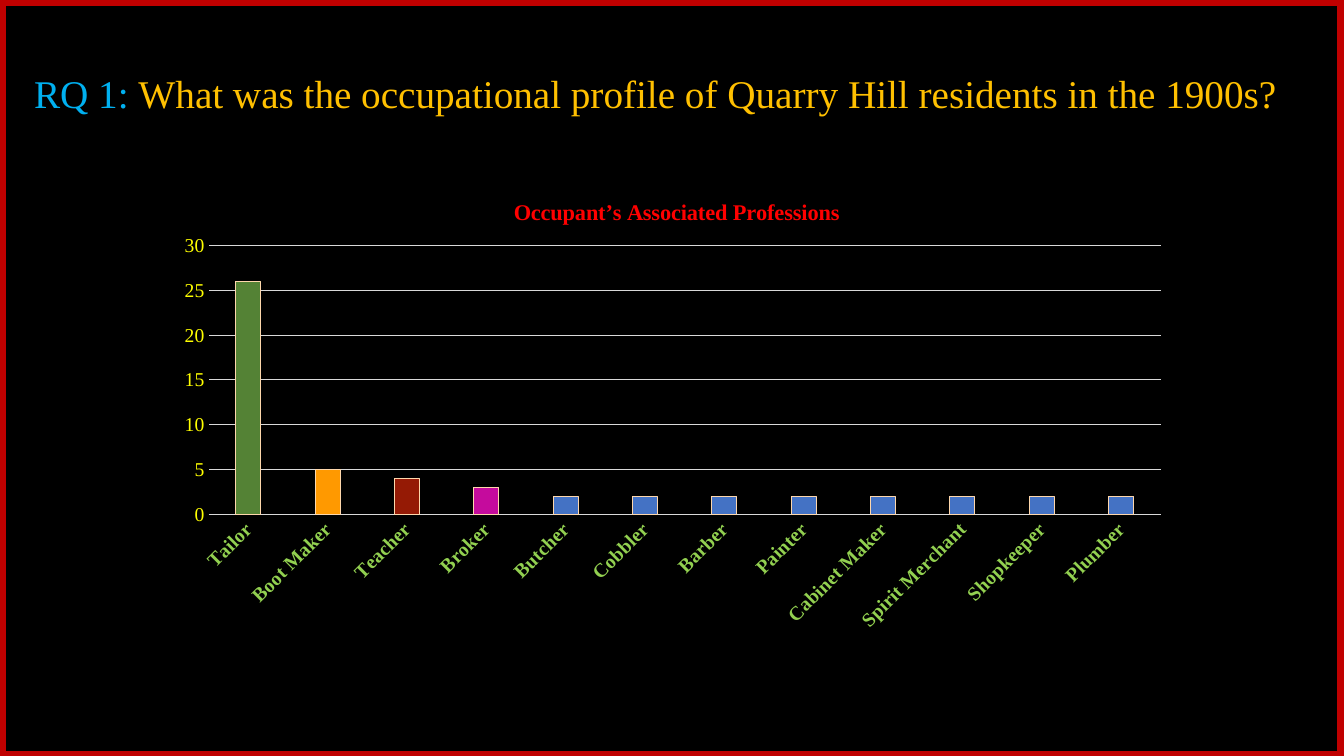
from dataclasses import dataclass

from lxml import etree
from pptx import Presentation
from pptx.chart.data import CategoryChartData
from pptx.dml.color import RGBColor
from pptx.enum.chart import XL_CHART_TYPE, XL_TICK_MARK
from pptx.enum.shapes import MSO_SHAPE
from pptx.enum.text import MSO_ANCHOR, PP_ALIGN
from pptx.oxml.ns import qn
from pptx.util import Pt

COLUMNS = XL_CHART_TYPE.COLUMN_CLUSTERED
NO_TICK = XL_TICK_MARK.NONE
RECTANGLE = MSO_SHAPE.RECTANGLE
MIDDLE = MSO_ANCHOR.MIDDLE
JUSTIFY = PP_ALIGN.JUSTIFY
PX = 9525


@dataclass(frozen=True)
class Theme:
    background: str = "000000"
    border: str = "C00000"
    label: str = "00B0F0"
    question: str = "FFC000"
    chart_title: str = "FF0000"
    professions: str = "92D050"
    counts: str = "FFFF00"
    grid: str = "D9D9D9"
    bar: str = "4472C4"
    bar_edge: str = "FED7AC"
    leading_bars: tuple = ("548235", "FF9900", "951A05", "C50B9D")
    font: str = "Times New Roman"
    base_font: str = "Calibri"
    base_size: float = 10
    question_size: float = 28
    title_size: float = 16
    axis_size: float = 14
    hairline: float = 0.75
    border_width: float = 6


def write(paragraph, text, *, size, color, bold=False):
    run = paragraph.add_run()
    run.text = text
    run.font.name = theme.font
    run.font.size = Pt(size)
    run.font.bold = bold
    run.font.color.rgb = RGBColor.from_string(color)


def place(parent, index, **fractions):
    for old in parent.findall(qn("c:layout")):
        parent.remove(old)
    layout = etree.Element(qn("c:layout"))
    manual = etree.SubElement(layout, qn("c:manualLayout"))
    if "w" in fractions:
        etree.SubElement(manual, qn("c:layoutTarget"), val="inner")
    for mode in ("xMode", "yMode"):
        etree.SubElement(manual, qn(f"c:{mode}"), val="edge")
    for key, value in fractions.items():
        etree.SubElement(manual, qn(f"c:{key}"), val=str(value))
    parent.insert(index, layout)


theme = Theme()
profession_counts = {
    "Tailor": 26, "Boot Maker": 5, "Teacher": 4, "Broker": 3,
    "Butcher": 2, "Cobbler": 2, "Barber": 2, "Painter": 2,
    "Cabinet Maker": 2, "Spirit Merchant": 2, "Shopkeeper": 2, "Plumber": 2,
}

prs = Presentation()
prs.slide_width = 1280 * PX
prs.slide_height = 720 * PX
slide = prs.slides.add_slide(prs.slide_layouts[6])
slide.background.fill.solid()
slide.background.fill.fore_color.rgb = RGBColor.from_string(theme.background)

border = slide.shapes.add_shape(RECTANGLE, 2 * PX, 2 * PX, 1275 * PX, 717 * PX)
border.shadow.inherit = False
border.fill.background()
border.line.color.rgb = RGBColor.from_string(theme.border)
border.line.width = Pt(theme.border_width)

chart_data = CategoryChartData()
chart_data.categories = list(profession_counts)
chart_data.add_series("Series 1", list(profession_counts.values()))
chart = slide.shapes.add_chart(
    COLUMNS, 156 * PX, 167 * PX, 969 * PX, 443 * PX, chart_data
).chart
chart.has_legend = False
chart.font.name = theme.base_font
chart.font.size = Pt(theme.base_size)
chart.font.color.rgb = RGBColor.from_string(theme.background)

chart.has_title = True
write(chart.chart_title.text_frame.paragraphs[0], "Occupant’s Associated Professions",
      size=theme.title_size, color=theme.chart_title, bold=True)
chart_root = chart.element.find(qn("c:chart"))
place(chart_root.find(qn("c:title")), 1, x=0.34, y=0.04)
place(chart_root.find(qn("c:plotArea")), 0, x=0.044, y=0.151, w=0.936, h=0.578)

professions, counts = chart.category_axis, chart.value_axis
for axis, color, bold in ((professions, theme.professions, True),
                          (counts, theme.counts, False)):
    axis.major_tick_mark = NO_TICK
    axis.minor_tick_mark = NO_TICK
    labels = axis.tick_labels.font
    labels.name = theme.font
    labels.size = Pt(theme.axis_size)
    labels.bold = bold
    labels.color.rgb = RGBColor.from_string(color)

counts.minimum_scale = 0
counts.maximum_scale = 30
counts.major_unit = 5
counts.format.line.fill.background()
for line in (professions.format.line, counts.major_gridlines.format.line):
    line.color.rgb = RGBColor.from_string(theme.grid)
    line.width = Pt(theme.hairline)
label_body = chart_root.find(".//" + qn("c:catAx")).find(".//" + qn("a:bodyPr"))
label_body.set("rot", "-2700000")
label_body.set("vert", "horz")

plot = chart.plots[0]
plot.gap_width = 219
plot.overlap = -27
plot.vary_by_categories = False
bars = plot.series[0]
bars.invert_if_negative = False
leading_points = [bars.points[i] for i in range(len(theme.leading_bars))]
for bar, color in zip([bars, *leading_points], (theme.bar, *theme.leading_bars)):
    bar.format.fill.solid()
    bar.format.fill.fore_color.rgb = RGBColor.from_string(color)
    bar.format.line.color.rgb = RGBColor.from_string(theme.bar_edge)
    bar.format.line.width = Pt(theme.hairline)

heading = slide.shapes.add_textbox(11 * PX, 23 * PX, 1254 * PX, 108 * PX).text_frame
heading.word_wrap = True
heading.vertical_anchor = MIDDLE
question = heading.paragraphs[0]
question.alignment = JUSTIFY
question.line_spacing = 1.5
question_format = question._p.get_or_add_pPr()
question_format.set("marL", str(12 * PX))
question_format.set("indent", "0")
write(question, "RQ 1: ", size=theme.question_size, color=theme.label)
write(question, "What was the occupational profile of Quarry Hill residents in the 1900s?",
      size=theme.question_size, color=theme.question)

prs.save("out.pptx")
